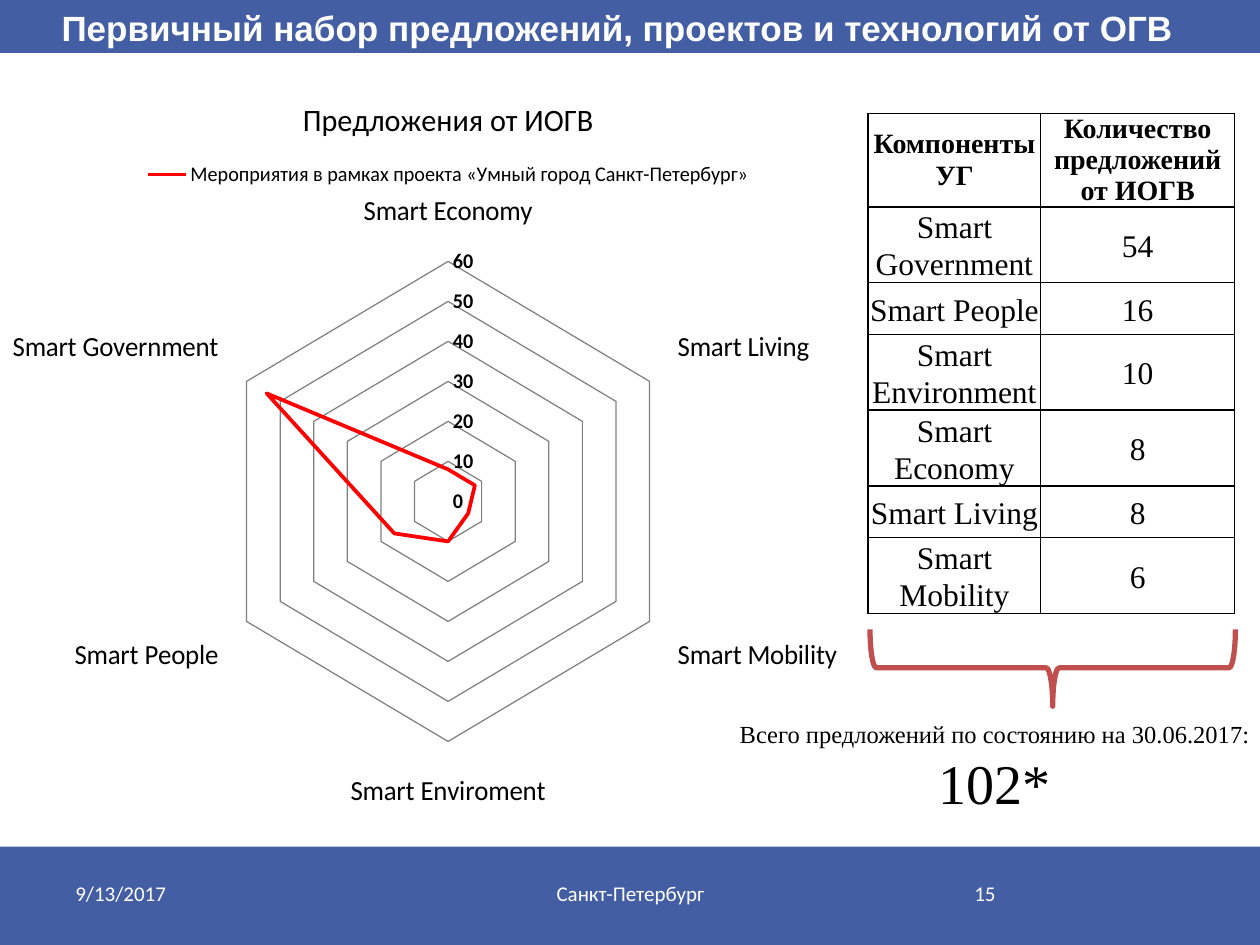
from lxml import etree
from pptx import Presentation
from pptx.chart.data import CategoryChartData
from pptx.dml.color import RGBColor
from pptx.enum.chart import XL_CHART_TYPE, XL_LEGEND_POSITION, XL_MARKER_STYLE, XL_TICK_MARK
from pptx.enum.shapes import MSO_SHAPE
from pptx.enum.text import MSO_ANCHOR, MSO_AUTO_SIZE, PP_ALIGN
from pptx.oxml import parse_xml
from pptx.oxml.ns import nsdecls, qn
from pptx.util import Inches, Pt

LEFT, CENTER, RIGHT = PP_ALIGN.LEFT, PP_ALIGN.CENTER, PP_ALIGN.RIGHT
TOP, MIDDLE = MSO_ANCHOR.TOP, MSO_ANCHOR.MIDDLE
NO_TICK = XL_TICK_MARK.NONE
BLUE, WHITE, BLACK, RED = "445EA4", "FFFFFF", "000000", "FF0000"
SERIF = "Times New Roman"

prs = Presentation()
prs.slide_width, prs.slide_height = Inches(10), Inches(7.5)
COL, ROW = prs.slide_width / 100, prs.slide_height / 75  # grid of 100 x 75


def grid(x, y, w, h):
    return int(x * COL), int(y * ROW), int(w * COL), int(h * ROW)


def style(font, size, name="Calibri", color=BLACK, bold=False):
    for key, value in {"size": Pt(size), "name": name, "bold": bold}.items():
        setattr(font, key, value)
    font.color.rgb = RGBColor.from_string(color)


slide = prs.slides.add_slide(prs.slide_layouts[5])
shapes = slide.shapes

# Bands, then the title above them
for y, h in [(67.2, 7.8), (0, 4.2)]:
    sp = shapes.add_shape(MSO_SHAPE.RECTANGLE, *grid(0, y, 100, h))
    sp.shadow.inherit = False
    sp.fill.solid()
    sp.fill.fore_color.rgb = RGBColor.from_string(BLUE)
    sp.line.fill.background()

title = shapes.title
title.left, title.top, title.width, title.height = grid(0, 0, 98, 4.4)
tf = title.text_frame
tf.text = "Первичный набор предложений, проектов и технологий от ОГВ"
tf.auto_size, tf.vertical_anchor = MSO_AUTO_SIZE.NONE, TOP
tf.paragraphs[0].alignment = CENTER
style(tf.paragraphs[0].runs[0].font, 20, "Arial", WHITE, True)
shapes._spTree.append(title._element)

# Radar chart
data = CategoryChartData()
data.categories = ["Smart Economy", "Smart Living", "Smart Mobility",
                   "Smart Enviroment", "Smart People", "Smart Government"]
data.add_series("Мероприятия в рамках проекта «Умный город Санкт-Петербург»",
                [8, 8, 6, 10, 16, 54])
chart = shapes.add_chart(XL_CHART_TYPE.RADAR, *grid(1, 5.6, 66.4, 58.6), data).chart
style(chart.font, 10)
chart.has_title = True
chart.chart_title.text_frame.text = "Предложения от ИОГВ"
style(chart.chart_title.text_frame.paragraphs[0].runs[0].font, 18)
chart.has_legend = True
chart.legend.position = XL_LEGEND_POSITION.TOP
chart.legend.include_in_layout = False
style(chart.legend.font, 12)

cat, val = chart.category_axis, chart.value_axis
cat.has_major_gridlines = False
cat.major_tick_mark = val.major_tick_mark = NO_TICK
style(cat.tick_labels.font, 16)
style(val.tick_labels.font, 12, bold=True)
val.minimum_scale, val.maximum_scale, val.major_unit = 0, 60, 10
val.has_major_gridlines = True
val.format.line.fill.background()

plot = chart.plots[0]
plot.vary_by_categories = False
series = plot.series[0]
series.smooth = False
series.marker.style = XL_MARKER_STYLE.NONE
for line, color, width in [(cat.format.line, "D9D9D9", 0.75),
                           (val.major_gridlines.format.line, "808080", 0.75),
                           (series.format.line, RED, 2.25)]:
    line.color.rgb = RGBColor.from_string(color)
    line.width = Pt(width)

plot_area = chart._chartSpace.chart.plotArea
for old in plot_area.findall(qn("c:layout")):
    plot_area.remove(old)
layout = parse_xml(f"<c:layout {nsdecls('c')}><c:manualLayout/></c:layout>")
for tag, value in {"layoutTarget": "inner", "xMode": "edge", "yMode": "edge",
                   "x": 0.21, "y": 0.245, "w": 0.58, "h": 0.69}.items():
    etree.SubElement(layout[0], qn(f"c:{tag}")).set("val", str(value))
plot_area.insert(0, layout)

# Table of components
rows = [("Компоненты УГ", "Количество предложений от ИОГВ"),
        ("Smart Government", "54"), ("Smart People", "16"),
        ("Smart Environment", "10"), ("Smart Economy", "8"),
        ("Smart Living", "8"), ("Smart Mobility", "6")]
table = shapes.add_table(len(rows), 2, *grid(68.9, 9, 29.1, 28.7)).table
for column, width in zip(table.columns, (13.7, 15.4)):
    column.width = int(width * COL)
for i, row in enumerate(rows):
    header = i == 0
    for j, text in enumerate(row):
        cell = table.cell(i, j)
        cell.text = text
        cell.vertical_anchor = MIDDLE
        cell.margin_left = cell.margin_right = cell.margin_top = Inches(0 if header else 0.01)
        cell.margin_bottom = 0
        p = cell.text_frame.paragraphs[0]
        p.alignment = CENTER
        if not header:
            p.line_spacing = 1.07
        style(p.runs[0].font, 16 if header else 18, SERIF, bold=header)
        tc_pr = cell._tc.get_or_add_tcPr()
        for side in ("lnL", "lnR", "lnT", "lnB"):
            tc_pr.append(parse_xml(
                f'<a:{side} {nsdecls("a")} w="12700"><a:solidFill>'
                f'<a:srgbClr val="{BLACK}"/></a:solidFill></a:{side}>'))
        cell.fill.solid()
        cell.fill.fore_color.rgb = RGBColor.from_string(WHITE)

# Brace under the table
brace = shapes.add_shape(MSO_SHAPE.LEFT_BRACE, *grid(80.5, 38.5, 6.1, 29))
brace.rotation = 270
brace.shadow.inherit = False
brace.fill.background()
brace.line.color.rgb = RGBColor.from_string("C0504D")
brace.line.width = Pt(3)

# Total and footer
texts = [
    ((50, 56.6, 57.9, 8.8), TOP, CENTER, SERIF, BLACK,
     [("Всего предложений по состоянию на 30.06.2017:", 14), ("102*", 32)]),
    ((5, 68.3, 23.3, 5.2), MIDDLE, LEFT, "Calibri", WHITE, [("9/13/2017", 12)]),
    ((34.2, 68.3, 31.7, 5.2), MIDDLE, CENTER, "Calibri", WHITE, [("Санкт-Петербург", 12)]),
    ((71.7, 68.3, 8.3, 5.2), MIDDLE, RIGHT, "Calibri", WHITE, [("15", 12)]),
]
for place, anchor, align, font, color, lines in texts:
    tf = shapes.add_textbox(*grid(*place)).text_frame
    tf.word_wrap, tf.vertical_anchor = True, anchor
    for n, (text, size) in enumerate(lines):
        p = tf.add_paragraph() if n else tf.paragraphs[0]
        p.alignment = align
        r = p.add_run()
        r.text = text
        style(r.font, size, font, color)

prs.save("out.pptx")
